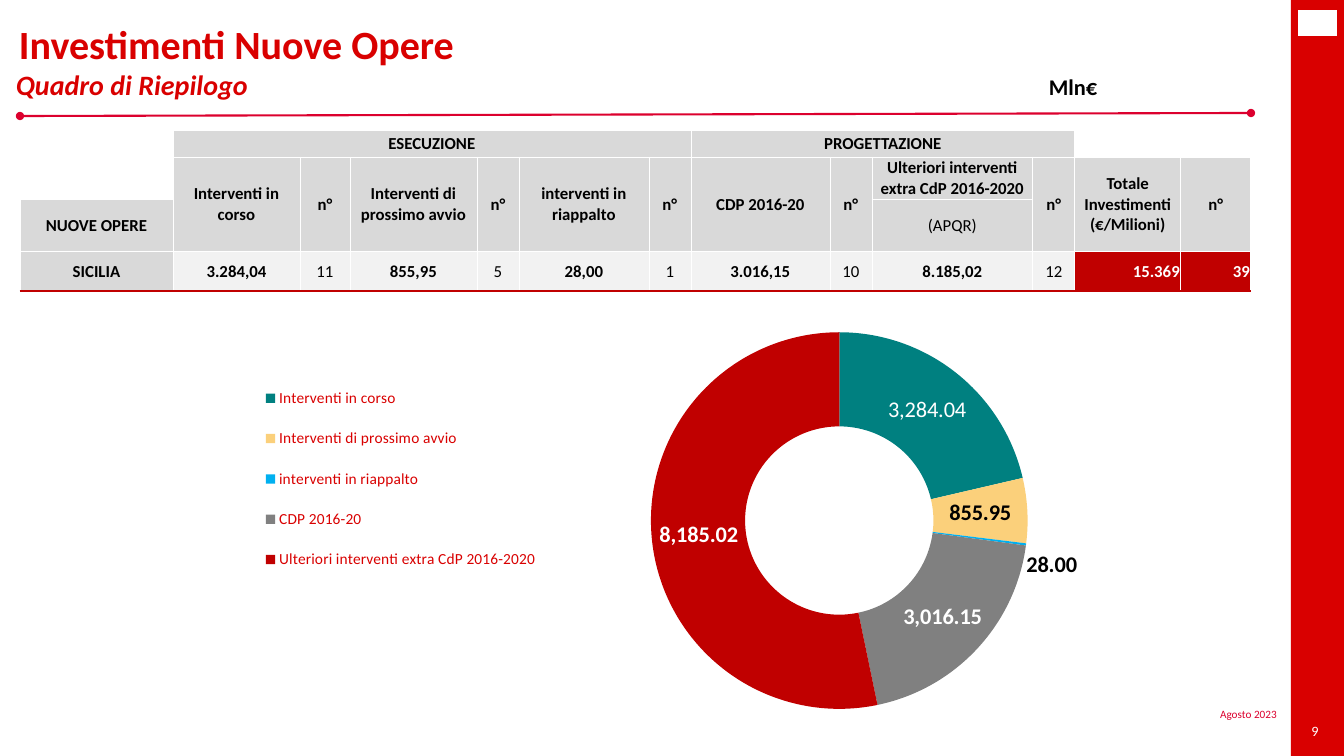
"""Build the slide on new rail works in Sicily."""
from lxml import etree
from pptx import Presentation
from pptx.chart.data import CategoryChartData
from pptx.dml.color import RGBColor
from pptx.enum.chart import XL_CHART_TYPE, XL_LEGEND_POSITION
from pptx.enum.shapes import MSO_CONNECTOR, MSO_SHAPE
from pptx.enum.text import MSO_ANCHOR, PP_ALIGN
from pptx.oxml import parse_xml
from pptx.oxml.ns import nsdecls, qn
from pptx.util import Pt

DONUT, KEY_LEFT = XL_CHART_TYPE.DOUGHNUT, XL_LEGEND_POSITION.LEFT
RECT, LINE = MSO_SHAPE.RECTANGLE, MSO_CONNECTOR.STRAIGHT
MID, LOW, TOP = MSO_ANCHOR.MIDDLE, MSO_ANCHOR.BOTTOM, MSO_ANCHOR.TOP
LEFT, MIDST, RIGHT = PP_ALIGN.LEFT, PP_ALIGN.CENTER, PP_ALIGN.RIGHT
PX = 914400 / 100.8


class Theme:
    """Hold the font, colours and type sizes."""
    font = "Calibri"
    red, line, dark = "D90000", "DC002E", "C00000"
    white, black, head, pale = "FFFFFF", "000000", "D9D9D9", "F2F2F2"
    slices = ["008080", "FBD07B", "00B0F0", "808080", "C00000"]
    title, sub, unit, cell, key, page, date = 28.6, 20, 16, 12, 11, 10.2, 8


TEXTS = [
    ("Investimenti Nuove Opere", (19, 0, 1232, 73), (0, 5, 10, 5), LOW, LEFT,
     Theme.title, Theme.red, True, False),
    ("Quadro di Riepilogo", (16, 51, 330, 55), (0, 5, 10, 5), LOW, LEFT,
     Theme.sub, Theme.red, True, True),
    ("Mln€", (1039, 68, 215, 37), (10, 5, 10, 5), TOP, LEFT,
     Theme.unit, Theme.black, True, False),
    ("Agosto 2023", (1200, 708, 77, 13), (0, 0, 0, 0), MID, RIGHT,
     Theme.date, Theme.line, False, False),
    ("9", (1298, 722, 34, 18), (0, 0, 0, 0), MID, MIDST,
     Theme.page, Theme.white, False, False),
]
COLS = [153, 127, 50, 127, 42, 130, 42, 139, 42, 161, 42, 106, 70]
ROWS = [27, 41, 52, 40]
CELLS = [
    ["", "ESECUZIONE", "", "", "", "", "", "PROGETTAZIONE", "", "", "", "", ""],
    ["", "Interventi in corso", "n°", "Interventi di prossimo avvio", "n°",
     "interventi in riappalto", "n°", "CDP 2016-20", "n°",
     "Ulteriori interventi extra CdP 2016-2020", "n°",
     "Totale Investimenti (€/Milioni)", "n°"],
    ["NUOVE OPERE", "", "", "", "", "", "", "", "", "(APQR)", "", "", ""],
    ["SICILIA", "3.284,04", "11", "855,95", "5", "28,00", "1", "3.016,15",
     "10", "8.185,02", "12", "15.369", "39"],
]
SHARES = {
    "Interventi in corso": 3284.04,
    "Interventi di prossimo avvio": 855.95,
    "interventi in riappalto": 28,
    "CDP 2016-20": 3016.15,
    "Ulteriori interventi extra CdP 2016-2020": 8185.02,
}


def px(*vals):
    return [round(v * PX) for v in vals]


def rgb(code):
    return RGBColor.from_string(code)


def style(font, size, color, bold=False, slant=False):
    font.name, font.size, font.bold, font.italic = Theme.font, Pt(size), bold, slant
    font.color.rgb = rgb(color)


def add_text(slide, text, box, pads, anchor, align, size, color, bold, slant):
    frame = slide.shapes.add_textbox(*px(*box)).text_frame
    frame.word_wrap, frame.vertical_anchor = True, anchor
    (frame.margin_left, frame.margin_top,
     frame.margin_right, frame.margin_bottom) = px(*pads)
    para = frame.paragraphs[0]
    para.text, para.alignment = text, align
    style(para.font, size, color, bold, slant)


def add_rect(slide, box, color):
    rect = slide.shapes.add_shape(RECT, *px(*box))
    rect.shadow.inherit = False
    rect.fill.solid()
    rect.fill.fore_color.rgb = rgb(color)
    rect.line.fill.background()


def add_rule(slide):
    rule = slide.shapes.add_connector(LINE, *px(20, 116, 1251, 113))
    rule.line.color.rgb, rule.line.width = rgb(Theme.line), Pt(1.5)
    props = rule._element.spPr
    ln = props.find(qn("a:ln"))
    for end in ("a:headEnd", "a:tailEnd"):
        etree.SubElement(ln, qn(end), type="oval")
    etree.SubElement(props, qn("a:effectLst"))


def edge(cell, side, color, width):
    cell._tc.get_or_add_tcPr().append(parse_xml(
        f'<a:ln{side} {nsdecls("a")} w="{Pt(width)}"><a:solidFill>'
        f'<a:srgbClr val="{color}"/></a:solidFill></a:ln{side}>'))


def frame_cell(cell, row, col):
    pair = row > 0 and 0 < col < 11
    if not (pair and col % 2 == 0):
        edge(cell, "L", Theme.white, 0.5)
    if not (pair and col % 2):
        edge(cell, "R", Theme.white, 0.5)
    if (row, col) != (2, 9):
        edge(cell, "T", Theme.white, 0.5)
    if row == 3:
        edge(cell, "B", Theme.dark, 1.5)
    elif (row, col) != (1, 9):
        edge(cell, "B", Theme.white, 0.5)


def fill_cell(cell, row, col, text):
    total = row == 3 and col > 10
    count = row == 3 and 0 < col < 11 and col % 2 == 0
    cell.vertical_anchor = MID
    cell.margin_left = cell.margin_top = cell.margin_right = px(1)[0]
    cell.margin_bottom = 0
    para = cell.text_frame.paragraphs[0]
    if text:
        para.text = text
    para.alignment = RIGHT if total else MIDST
    style(para.font, Theme.cell, Theme.white if total else Theme.black,
          not count and text != "(APQR)")
    if not text:
        cell.fill.background()
        return
    cell.fill.solid()
    tone = Theme.dark if total else Theme.pale if row == 3 and col else Theme.head
    cell.fill.fore_color.rgb = rgb(tone)


def add_grid(slide):
    grid = slide.shapes.add_table(
        len(ROWS), len(COLS), *px(20, 130, sum(COLS), sum(ROWS))).table
    grid.first_row = grid.horz_banding = False
    plain = grid._tbl.tblPr.find(qn("a:tableStyleId"))
    plain.text = "{2D5ABB26-0587-4C30-8999-92F81FD0307C}"
    for col, wide in zip(grid.columns, px(*COLS)):
        col.width = wide
    for row, high in zip(grid.rows, px(*ROWS)):
        row.height = high
    spans = [(0, 1, 0, 6), (0, 7, 0, 10)]
    spans += [(1, c, 2, c) for c in range(1, 13) if c != 9]
    for top, left, low, right in spans:
        grid.cell(top, left).merge(grid.cell(low, right))
    for r, texts in enumerate(CELLS):
        for c, text in enumerate(texts):
            cell = grid.cell(r, c)
            if not cell.is_spanned:
                frame_cell(cell, r, c)
            fill_cell(cell, r, c, text)


def place(node, spot, **vals):
    for old in node.findall(qn("c:layout")):
        node.remove(old)
    tags = "".join(f'<c:{k} val="{v}"/>' for k, v in vals.items())
    node.insert(spot, parse_xml(
        f'<c:layout {nsdecls("c")}><c:manualLayout>{tags}'
        '</c:manualLayout></c:layout>'))


def add_donut(slide):
    data = CategoryChartData(number_format="#,##0.00")
    data.categories = list(SHARES)
    data.add_series("Series 1", list(SHARES.values()))
    chart = slide.shapes.add_chart(DONUT, *px(193, 306, 904, 438), data).chart
    style(chart.font, 10, Theme.black)
    chart.has_title, chart.has_legend = False, True
    key = chart.legend
    key.position, key.include_in_layout = KEY_LEFT, False
    style(key.font, Theme.key, Theme.red)
    plot = chart.plots[0]
    plot.vary_by_categories = True
    series = plot.series[0]
    tags = series.data_labels
    tags.show_value, tags.number_format = True, "#,##0.00"
    tags.number_format_is_linked = False
    style(tags.font, Theme.unit, Theme.white, True)
    for i, color in enumerate(Theme.slices):
        fill = series.points[i].format.fill
        fill.solid()
        fill.fore_color.rgb = rgb(color)
    for i, color in enumerate([Theme.white, Theme.black, Theme.black]):
        style(series.points[i].data_label.font, Theme.unit, color, i > 0)
    root = chart._chartSpace
    root.xpath(".//c:holeSize")[0].set("val", "53")
    place(root.xpath(".//c:plotArea")[0], 0, layoutTarget="inner",
          xMode="edge", yMode="edge", x=0.47, y=0.06, w=0.49, h=0.86)
    place(root.xpath(".//c:legend")[0], 1,
          xMode="edge", yMode="edge", x=0.06, y=0.14, w=0.34, h=0.51)
    place(root.xpath('.//c:dLbl[c:idx/@val="2"]')[0], 1, x=0.08, y=0.06)


def main():
    deck = Presentation()
    deck.slide_width, deck.slide_height = px(1344, 756)
    slide = deck.slides.add_slide(deck.slide_layouts[6])
    add_rect(slide, (1291, 0, 53, 756), Theme.red)
    add_rect(slide, (1298, 10, 39, 26), Theme.white)
    add_rule(slide)
    add_donut(slide)
    add_grid(slide)
    for item in TEXTS:
        add_text(slide, *item)
    deck.save("out.pptx")


if __name__ == "__main__":
    main()
